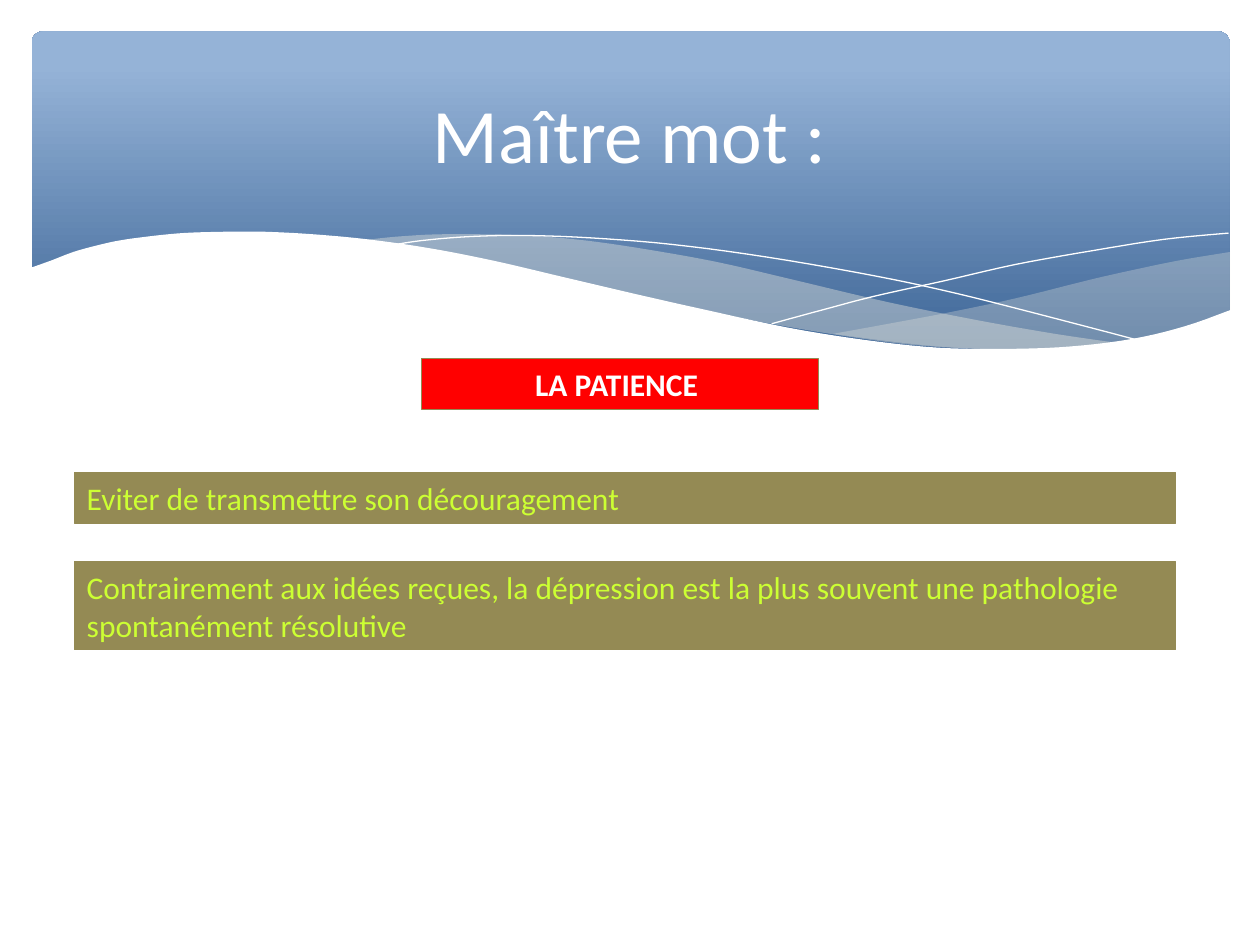
import lxml.etree
import pptx
import pptx.dml.color
import pptx.enum.shapes
import pptx.enum.text
import pptx.oxml.ns
import pptx.util

Pt = pptx.util.Pt
ALIGN = pptx.enum.text.PP_ALIGN
ANCHOR = pptx.enum.text.MSO_ANCHOR
SHAPE = pptx.enum.shapes.MSO_SHAPE

WHITE, RED, OLIVE, LIME, CREAM = "FFFFFF", "FF0000", "948A54", "CCFF33", "EEECE1"
BAND_DARK, BAND_LIGHT = "376092", "95B3D7"

# Wave outlines in points
RIGHT_WAVE_TOP = [(703, 144), (673, 149), (642, 155.5), (620, 160.6), (580, 170.6),
                  (542, 178.6), (508, 185), (476, 190.8)]
RIGHT_WAVE_BOTTOM = [(476, 190.8), (508, 195), (536, 198), (562, 199.4), (586, 200),
                     (615, 199.2), (640, 197), (663, 192.5), (683, 185), (703, 177.8)]
LONG_WAVE_TOP = [(643, 196.6), (603, 190.8), (558, 182.9), (508, 172.8), (453, 159.8),
                 (410, 149.8), (370, 142.6), (335, 137.5), (302, 134.6), (274, 133.9),
                 (248, 134), (225, 135.4), (206, 137.5)]
LONG_WAVE_BOTTOM = [(206, 137.5), (246, 143.3), (291, 151.9), (323, 159.8), (382, 172.8),
                    (433, 183.6), (479, 191.5), (520, 197), (557, 199.4), (589, 200.2),
                    (617, 199.4), (643, 196.6)]
FALLING_LINE = [(222.5, 140.4), (241, 137.5), (269, 135.2), (300, 134.6), (338, 136),
                (384, 139.7), (438, 146.9), (500, 157.7), (547, 167.8), (598, 180.7),
                (653, 195.1)]
RISING_LINE = [(441, 185), (470, 177.1), (500, 169.2), (539, 160.6), (580, 151.2),
               (624, 143.3), (665, 136.8), (702, 133.2)]
PAGE_EDGE = [(703.4, 177.1), (677, 186.5), (647, 193.7), (612, 198), (576, 199.4),
             (536, 198.7), (495, 194.4), (450, 187.2), (400, 176.4), (362, 167.8),
             (322, 158.4), (282, 149), (245, 141.8), (210, 136.8), (180, 134),
             (152, 132.5), (127, 132.5), (105, 133.2), (86, 135), (68, 137.5),
             (55, 140.4), (42, 144), (29, 149), (16.6, 153.4)]


def color(hex_string):
    return pptx.dml.color.RGBColor.from_string(hex_string)


def smooth(knots, steps=5):
    """Return points of a Catmull-Rom curve through the knots."""
    padded = [knots[0], *knots, knots[-1]]
    curve = [knots[0]]
    for a, b, c, d in zip(padded, padded[1:], padded[2:], padded[3:]):
        for step in range(1, steps + 1):
            t = step / steps
            curve.append(tuple(
                (2 * q + (r - p) * t + (2 * p - 5 * q + 4 * r - s) * t ** 2
                 + (3 * q - p - 3 * r + s) * t ** 3) / 2
                for p, q, r, s in zip(a, b, c, d)))
    return curve


class SlideBuilder:
    font = "Calibri"
    line_width = 0.75

    def __init__(self, slide):
        self.slide = slide
        self.shapes = slide.shapes

    def paint(self, shape, fill=None, line=None, opacity=None):
        shape.shadow.inherit = False
        if fill:
            shape.fill.solid()
            shape.fill.fore_color.rgb = color(fill)
        else:
            shape.fill.background()
        if opacity:
            properties = shape._element.spPr
            rgb = properties.find(".//" + pptx.oxml.ns.qn("a:srgbClr"))
            alpha = lxml.etree.SubElement(rgb, pptx.oxml.ns.qn("a:alpha"))
            alpha.set("val", str(opacity * 1000))
        if line:
            shape.line.color.rgb = color(line)
            shape.line.width = Pt(self.line_width)
        else:
            shape.line.fill.background()

    def add_text(self, frame, text, size, text_color, align, bold=False):
        paragraph = frame.paragraphs[0]
        paragraph.alignment = align
        run = paragraph.add_run()
        run.text = text
        run.font.name = self.font
        run.font.size = Pt(size)
        run.font.bold = bold
        run.font.color.rgb = color(text_color)

    def gradient_band(self, left, top, width, height):
        band = self.shapes.add_shape(SHAPE.ROUNDED_RECTANGLE, Pt(left), Pt(top),
                                     Pt(width), Pt(height))
        band.adjustments[0] = 0.034
        self.paint(band)
        band.fill.gradient()
        band.fill.gradient_angle = 90
        stops = zip(band.fill.gradient_stops, [(0, BAND_DARK), (0.9, BAND_LIGHT)])
        for stop, (position, stop_color) in stops:
            stop.position = position
            stop.color.rgb = color(stop_color)

    def outline(self, points, closed=True, **style):
        start, *rest = [(Pt(x), Pt(y)) for x, y in points]
        builder = self.shapes.build_freeform(*start)
        builder.add_line_segments(rest, close=closed)
        self.paint(builder.convert_to_shape(), **style)

    def title(self, text, left, top, width, height):
        title = self.shapes.title
        title.left, title.top = Pt(left), Pt(top)
        title.width, title.height = Pt(width), Pt(height)
        title.text_frame.vertical_anchor = ANCHOR.MIDDLE
        self.add_text(title.text_frame, text, 44, WHITE, ALIGN.CENTER)
        # Bring the title in front of the band
        self.shapes._spTree.append(title._element)

    def box(self, text, left, top, width, height, fill, text_color,
            align=ALIGN.LEFT, bold=False):
        box = self.shapes.add_shape(SHAPE.RECTANGLE, Pt(left), Pt(top),
                                    Pt(width), Pt(height))
        self.paint(box, fill, OLIVE)
        box.text_frame.word_wrap = True
        box.text_frame.vertical_anchor = ANCHOR.TOP
        self.add_text(box.text_frame, text, 18, text_color, align, bold)


def main():
    deck = pptx.Presentation()
    deck.slide_width, deck.slide_height = Pt(720), Pt(540)
    page = SlideBuilder(deck.slides.add_slide(deck.slide_layouts[5]))

    page.gradient_band(18, 18, 684.7, 194.4)
    page.outline(smooth(RIGHT_WAVE_TOP) + smooth(RIGHT_WAVE_BOTTOM), fill=CREAM, opacity=29)
    page.outline(smooth(LONG_WAVE_TOP) + smooth(LONG_WAVE_BOTTOM), fill=CREAM, opacity=40)
    for line in (FALLING_LINE, RISING_LINE):
        page.outline(smooth(line), closed=False, line=WHITE)
    page.outline(smooth(PAGE_EDGE) + [(16.6, 236.9), (703.4, 236.9)], fill=WHITE)

    page.title("Maître mot :", 36, 26.6, 648, 98.6)
    page.box("LA PATIENCE ", 241, 205, 226.8, 29, RED, WHITE, ALIGN.CENTER, bold=True)
    advice = [
        ("Eviter de transmettre son découragement", 270, 29),
        ("Contrairement aux idées reçues, la dépression est la plus souvent "
         "une pathologie spontanément résolutive", 321, 50.4),
    ]
    for text, top, height in advice:
        page.box(text, 42.5, top, 629.3, height, OLIVE, LIME)

    deck.save("out.pptx")


if __name__ == "__main__":
    main()
